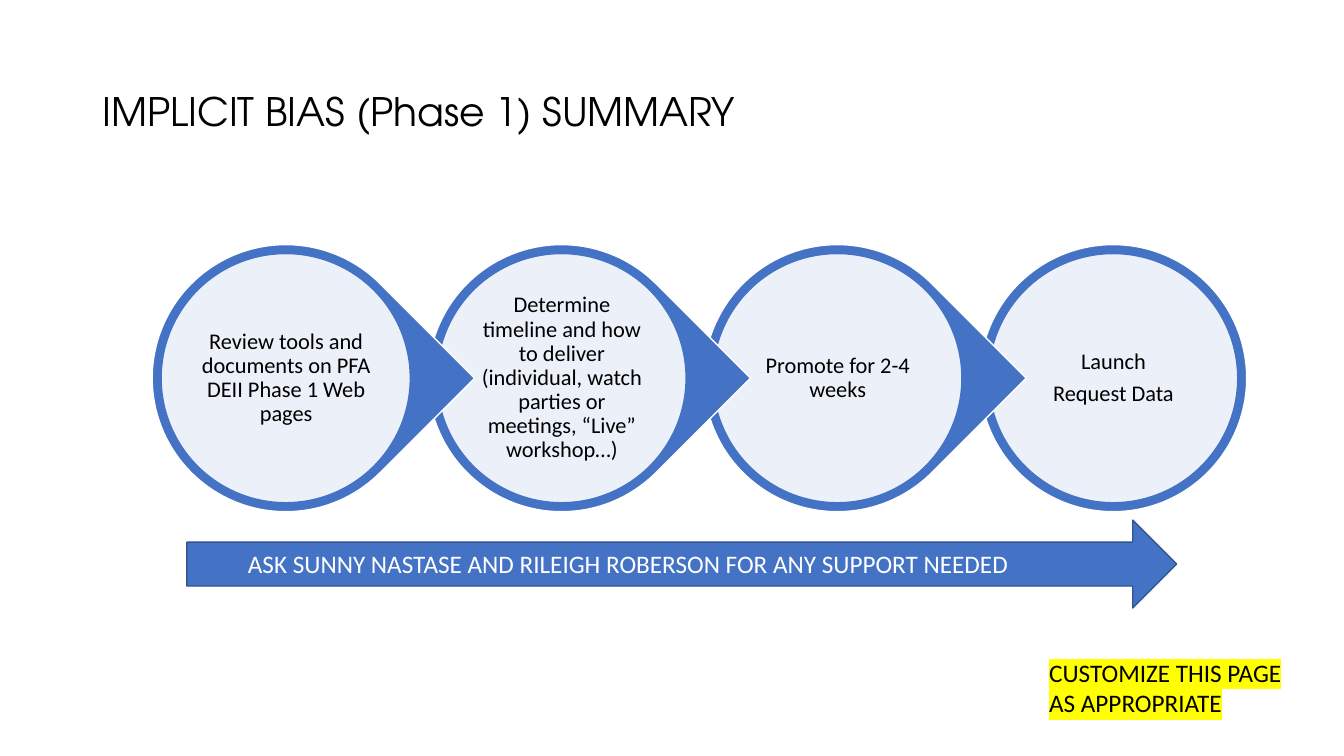
from lxml.etree import SubElement
from pptx import Presentation
from pptx.dml.color import RGBColor
from pptx.enum.shapes import MSO_SHAPE
from pptx.enum.text import MSO_ANCHOR, PP_ALIGN
from pptx.oxml.ns import qn
from pptx.util import Pt

COLORS = {
    "blue": "4472C4",
    "dark blue": "325491",
    "white": "FFFFFF",
    "black": "000000",
    "yellow": "FFFF00",
}

presentation = Presentation()
presentation.slide_width = Pt(960)
presentation.slide_height = Pt(540)
slide = presentation.slides.add_slide(presentation.slide_layouts[6])


def add_text(left, top, width, height, *paragraphs, size=18, font="Calibri",
             color="black", align=PP_ALIGN.LEFT, anchor=MSO_ANCHOR.TOP,
             spacing=1.0, after=0, inset=None, highlight=None):
    box = slide.shapes.add_textbox(Pt(left), Pt(top), Pt(width), Pt(height))
    frame = box.text_frame
    frame.word_wrap = True
    frame.vertical_anchor = anchor
    if inset is not None:
        frame.margin_left = frame.margin_right = Pt(inset)
        frame.margin_top = frame.margin_bottom = Pt(inset)
    frame.text = "\n".join(paragraphs)
    for paragraph in frame.paragraphs:
        paragraph.alignment = align
        paragraph.line_spacing = spacing
        paragraph.space_after = Pt(after)
        run = paragraph.runs[0]
        run.font.size = Pt(size)
        run.font.name = font
        run.font.color.rgb = RGBColor.from_string(COLORS[color])
        if highlight:
            properties = run.font._element
            marker = SubElement(properties, qn("a:highlight"))
            SubElement(marker, qn("a:srgbClr"), val=COLORS[highlight])
            properties.find(qn("a:solidFill")).addnext(marker)


def add_figure(preset, left, top, width, height, fill, line):
    figure = slide.shapes.add_shape(preset, Pt(left), Pt(top), Pt(width), Pt(height))
    figure.shadow.inherit = False
    figure.fill.solid()
    figure.fill.fore_color.rgb = RGBColor.from_string(COLORS[fill])
    figure.line.color.rgb = RGBColor.from_string(COLORS[line])
    figure.line.width = Pt(1)
    return figure


add_text(66, 28.75, 828, 104.4, "IMPLICIT BIAS (Phase 1) SUMMARY", size=28,
         font="TeX Gyre Adventor", anchor=MSO_ANCHOR.MIDDLE, spacing=0.9)

# Each step's point overlaps the next step, so the last step goes in first
steps = [
    ["Review tools and documents on PFA DEII Phase 1 Web pages"],
    ["Determine timeline and how to deliver (individual, watch parties or "
     "meetings, “Live” workshop…)"],
    ["Promote for 2-4 weeks"],
    ["Launch", "Request Data"],
]
first_left, step_top, pitch = 108.7, 174.7, 197
ring_size, disc_size = 190.8, 178
disc_offset = (ring_size - disc_size) / 2
last = len(steps) - 1

for index, step in reversed(list(enumerate(steps))):
    left = first_left + index * pitch
    preset = MSO_SHAPE.OVAL if index == last else MSO_SHAPE.TEAR
    ring = add_figure(preset, left, step_top, ring_size, ring_size, "blue", "white")
    if index != last:
        ring.rotation = 45

    disc = add_figure(MSO_SHAPE.OVAL, left + disc_offset, step_top + disc_offset,
                      disc_size, disc_size, "white", "blue")
    disc_color = disc._element.spPr.find(qn("a:solidFill"))[0]
    SubElement(disc_color, qn("a:alpha"), val="90000")

    add_text(left + 32, step_top + 32, 127.4, 126.8, *step, size=16,
             align=PP_ALIGN.CENTER, anchor=MSO_ANCHOR.MIDDLE, spacing=0.9,
             after=5.6, inset=1.6)

add_figure(MSO_SHAPE.RIGHT_ARROW, 133.5, 371.5, 707, 62.8, "blue", "dark blue")
add_text(170, 388, 633, 29, "ASK SUNNY NASTASE AND RILEIGH ROBERSON FOR ANY SUPPORT NEEDED",
         color="white")
add_text(742.3, 466, 196, 51, "CUSTOMIZE THIS PAGE AS APPROPRIATE",
         after=6, highlight="yellow")

presentation.save("out.pptx")
